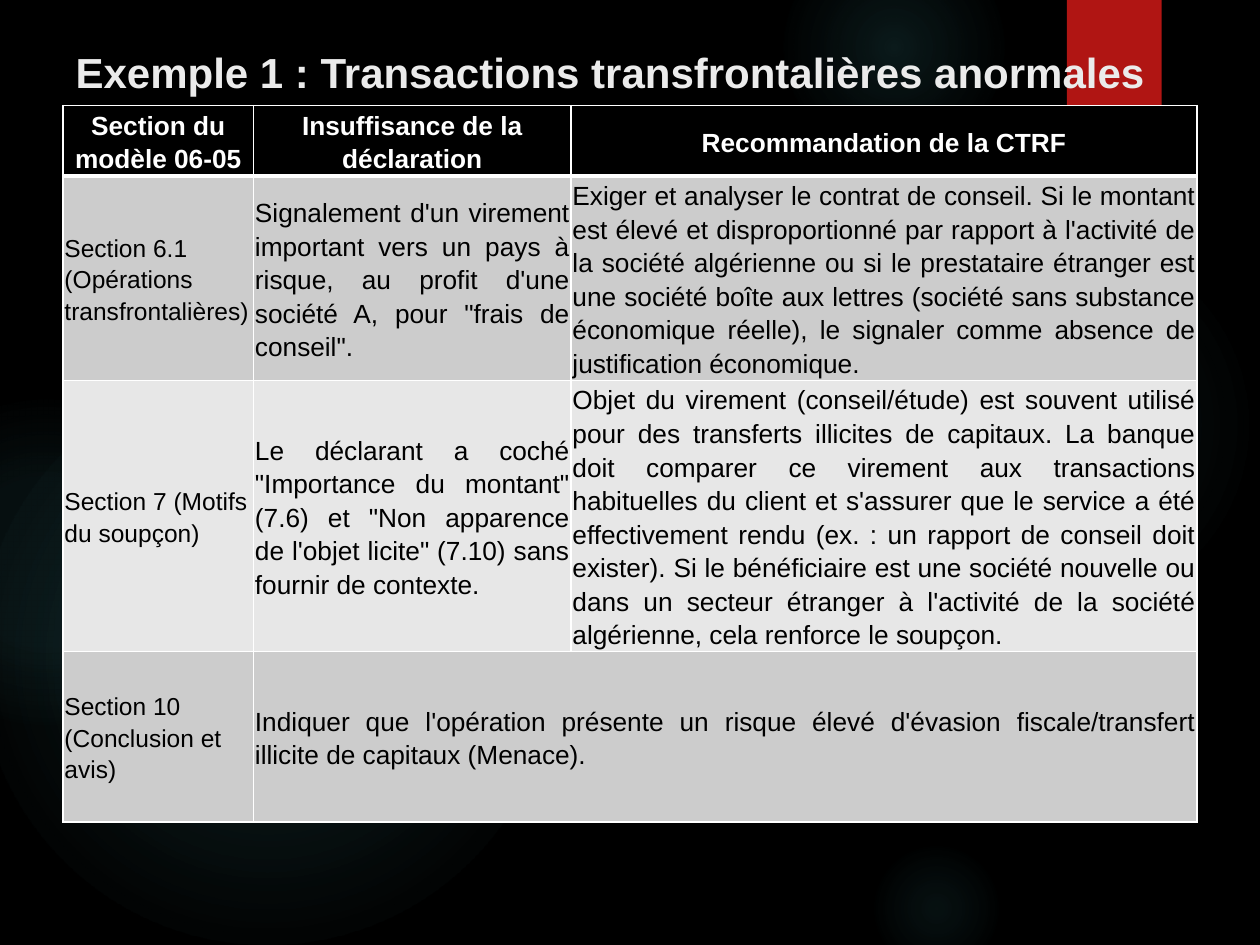
import pptx
import pptx.dml.color
import pptx.enum.shapes
import pptx.enum.text
import pptx.oxml
import pptx.oxml.ns
import pptx.util

Cm = pptx.util.Cm
Pt = pptx.util.Pt
RGBColor = pptx.dml.color.RGBColor
SHAPE = pptx.enum.shapes.MSO_SHAPE
ALIGN = pptx.enum.text.PP_ALIGN
MIDDLE = pptx.enum.text.MSO_ANCHOR.MIDDLE

BLACK = RGBColor(0x00, 0x00, 0x00)
WHITE = RGBColor(0xFF, 0xFF, 0xFF)
TITLE_GREY = RGBColor(0xEB, 0xEB, 0xEB)
RED = RGBColor(0xB0, 0x15, 0x13)
TEAL = RGBColor(0x50, 0xB9, 0xC1)
DARK_BAND = RGBColor(0xCC, 0xCC, 0xCC)
LIGHT_BAND = RGBColor(0xE7, 0xE7, 0xE7)

TITLE = "Exemple 1 : Transactions transfrontalières anormales"
GLOWS = [
    (17.5, 4.65, 7.82, [(0, 7), (36, 6), (69, 0)]),
    (15.8, -1.27, 4.45, [(0, 14), (36, 7), (73, 0)]),
    (17.5, 16.94, 2.74, [(0, 9), (36, 5), (66, 0)]),
    (-0.43, 7.42, 11.63, [(0, 11), (36, 10), (75, 0)]),
    (-2.34, 8.05, 6.55, [(0, 8), (36, 8), (72, 0)]),
]
COLUMNS = [3.84, 6.4, 12.62]
HEIGHTS = [1.42, 4.11, 5.23, 3.43]
ROWS = [
    ["Section du modèle 06-05", "Insuffisance de la déclaration",
     "Recommandation de la CTRF"],
    ["Section 6.1 (Opérations transfrontalières)",
     "Signalement d'un virement important vers un pays à risque, au profit "
     "d'une société A, pour \"frais de conseil\".",
     "Exiger et analyser le contrat de conseil. Si le montant est élevé et "
     "disproportionné par rapport à l'activité de la société algérienne ou si "
     "le prestataire étranger est une société boîte aux lettres (société sans "
     "substance économique réelle), le signaler comme absence de "
     "justification économique."],
    ["Section 7 (Motifs du soupçon)",
     "Le déclarant a coché \"Importance du montant\" (7.6) et \"Non apparence "
     "de l'objet licite\" (7.10) sans fournir de contexte.",
     "Objet du virement (conseil/étude) est souvent utilisé pour des "
     "transferts illicites de capitaux. La banque doit comparer ce virement "
     "aux transactions habituelles du client et s'assurer que le service a "
     "été effectivement rendu (ex. : un rapport de conseil doit exister). Si "
     "le bénéficiaire est une société nouvelle ou dans un secteur étranger à "
     "l'activité de la société algérienne, cela renforce le soupçon."],
    ["Section 10 (Conclusion et avis)",
     "Indiquer que l'opération présente un risque élevé d'évasion "
     "fiscale/transfert illicite de capitaux (Menace)."],
]
HEAD = {"size": Pt(15), "bold": True}
LABEL = {"size": Pt(14), "bold": False}
BODY = {"size": Pt(15), "bold": False}
CELL = {"vertical_anchor": MIDDLE, "margin_left": Cm(0.03),
        "margin_right": Cm(0.03), "margin_top": Cm(0.03),
        "margin_bottom": Cm(0.03)}


def apply(obj, values):
    for name, value in values.items():
        setattr(obj, name, value)


def write(tf, text, font, color, align):
    p = tf.paragraphs[0]
    p.alignment = align
    r = p.add_run()
    r.text = text
    apply(r.font, {"name": "Arial", **font})
    r.font.color.rgb = color
    return p


def add_block(s, kind, left, top, width, height, color):
    sp = s.shapes.add_shape(kind, Cm(left), Cm(top), Cm(width), Cm(height))
    sp.shadow.inherit = False
    sp.fill.solid()
    sp.fill.fore_color.rgb = color
    sp.line.fill.background()
    return sp


def add_glow(s, left, top, size, stops):
    sp = add_block(s, SHAPE.OVAL, left, top, size, size, TEAL)
    marks = "".join(
        f'<a:gs pos="{pos * 1000}"><a:srgbClr val="{TEAL}">'
        f'<a:alpha val="{alpha * 1000}"/></a:srgbClr></a:gs>'
        for pos, alpha in stops)
    grad = pptx.oxml.parse_xml(
        f'<a:gradFill {pptx.oxml.ns.nsdecls("a")} rotWithShape="1">'
        f'<a:gsLst>{marks}</a:gsLst><a:path path="circle">'
        '<a:fillToRect l="50000" t="50000" r="50000" b="50000"/>'
        '</a:path></a:gradFill>')
    solid = sp.element.spPr.find(pptx.oxml.ns.qn("a:solidFill"))
    solid.getparent().replace(solid, grad)


def add_title(s):
    sp = s.shapes.title
    apply(sp, {"left": Cm(1.27), "top": Cm(0.76),
               "width": Cm(22.86), "height": Cm(1.37)})
    tf = sp.text_frame
    apply(tf, {"word_wrap": True, "vertical_anchor": MIDDLE,
               "auto_size": pptx.enum.text.MSO_AUTO_SIZE.NONE})
    write(tf, TITLE, {"size": Pt(24), "bold": True}, TITLE_GREY, ALIGN.LEFT)
    tree = sp.element.getparent()
    tree.append(sp.element)


def set_borders(cell, top, bottom):
    tc_pr = cell._tc.get_or_add_tcPr()
    sides = {"L": 1, "R": 1, "T": top, "B": bottom}
    for i, (side, width) in enumerate(sides.items()):
        tc_pr.insert(i, pptx.oxml.parse_xml(
            f'<a:ln{side} {pptx.oxml.ns.nsdecls("a")} w="{Pt(width)}">'
            f'<a:solidFill><a:srgbClr val="{WHITE}"/></a:solidFill>'
            f'</a:ln{side}>'))


def format_cell(cell, row):
    apply(cell, CELL)
    cell.fill.solid()
    band = DARK_BAND if row % 2 else LIGHT_BAND
    if row == len(ROWS) - 1:
        band = DARK_BAND
    cell.fill.fore_color.rgb = band if row else BLACK
    set_borders(cell, 3 if row == 1 else 1, 1 if row else 3)


def add_table(s):
    frame = s.shapes.add_table(len(ROWS), len(COLUMNS), Cm(1.27), Cm(2.13),
                               Cm(sum(COLUMNS)), Cm(sum(HEIGHTS)))
    table = frame.table
    for column, width in zip(table.columns, COLUMNS):
        column.width = Cm(width)
    for i, (texts, height) in enumerate(zip(ROWS, HEIGHTS)):
        table.rows[i].height = Cm(height)
        for j in range(len(COLUMNS)):
            format_cell(table.cell(i, j), i)
        for j, text in enumerate(texts):
            if i == 0:
                style = HEAD, WHITE, ALIGN.CENTER
            elif j == 0:
                style = LABEL, BLACK, ALIGN.LEFT
            else:
                style = BODY, BLACK, ALIGN.JUSTIFY
            p = write(table.cell(i, j).text_frame, text, *style)
            p.line_spacing = 1.15
    last = len(ROWS) - 1
    table.cell(last, 1).merge(table.cell(last, 2))


def main():
    prs = pptx.Presentation()
    apply(prs, {"slide_width": Cm(25.4), "slide_height": Cm(19.05)})
    s = prs.slides.add_slide(prs.slide_layouts[5])
    s.background.fill.solid()
    s.background.fill.fore_color.rgb = BLACK
    for glow in GLOWS:
        add_glow(s, *glow)
    add_block(s, SHAPE.RECTANGLE, 21.51, 0, 1.91, 3.05, RED)
    add_title(s)
    add_table(s)
    prs.save("out.pptx")


if __name__ == "__main__":
    main()
